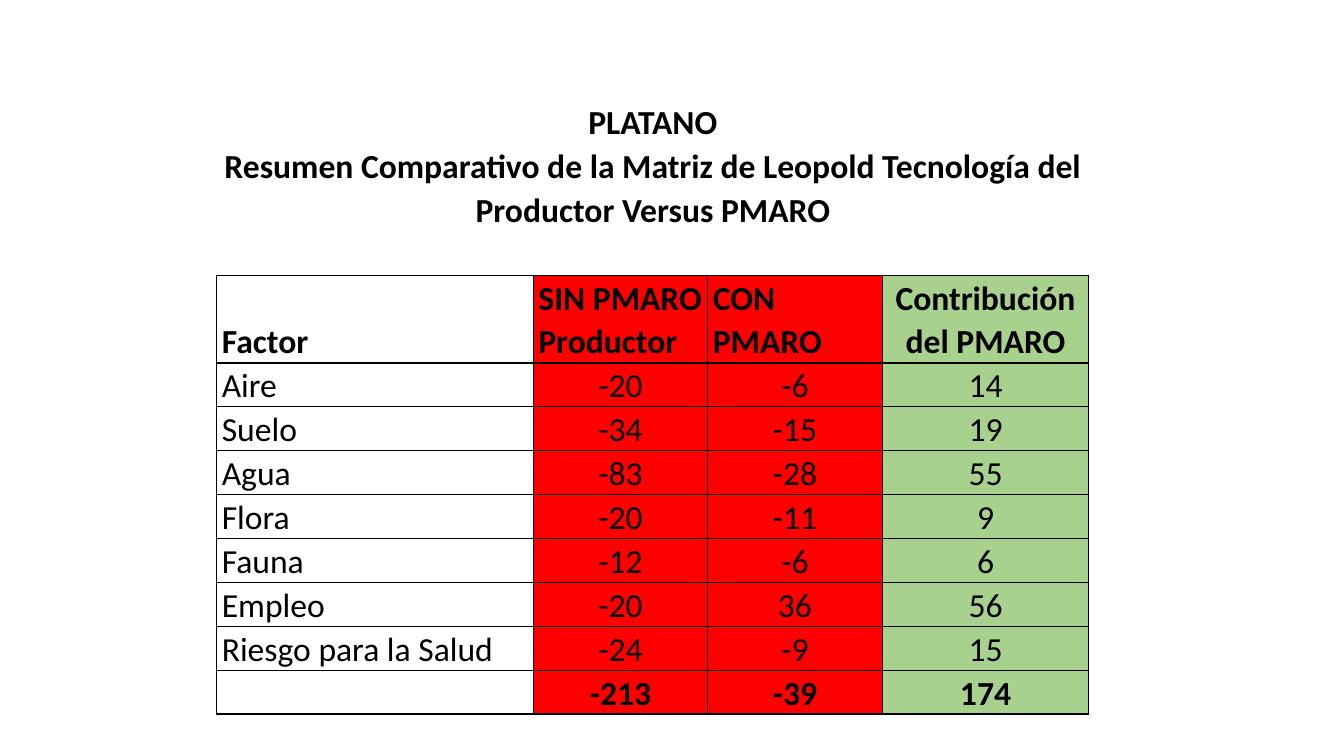
import pptx
import pptx.dml.color
import pptx.enum.text
import pptx.oxml
import pptx.oxml.ns
import pptx.util
from lxml import etree

Inches, Pt = pptx.util.Inches, pptx.util.Pt
LEFT, CENTER = pptx.enum.text.PP_ALIGN.LEFT, pptx.enum.text.PP_ALIGN.CENTER

BLACK, RED, GREEN = "000000", "FF0000", "A9D18E"
COLUMN_SHARES = [0.363, 0.2, 0.2, 0.237]
COLUMN_FILLS = [(None, 100), (RED, 100), (RED, 17), (GREEN, 100)]
LINE_HEIGHT = 0.435
TITLE = ("PLATANO\nResumen Comparativo de la Matriz de Leopold "
         "Tecnología del Productor Versus PMARO")
HEADINGS = ["Factor", "SIN PMARO\nProductor", "CON\nPMARO", "Contribución del PMARO"]
FACTORS = [
    ("Aire", -20, -6, 14),
    ("Suelo", -34, -15, 19),
    ("Agua", -83, -28, 55),
    ("Flora", -20, -11, 9),
    ("Fauna", -12, -6, 6),
    ("Empleo", -20, 36, 56),
    ("Riesgo para la Salud", -24, -9, 15),
]
TOTALS = ("", -213, -39, 174)


def rgb(color):
    return pptx.dml.color.RGBColor.from_string(color)


def draw_borders(cell, sides):
    """Draw 1 pt black lines on the given sides (L, R, T, B, in that order)."""
    properties = cell._tc.get_or_add_tcPr()
    for side in sides:
        properties.append(pptx.oxml.parse_xml(
            f'<a:ln{side} {pptx.oxml.ns.nsdecls("a")} w="{Pt(1)}"><a:solidFill>'
            f'<a:srgbClr val="{BLACK}"/></a:solidFill></a:ln{side}>'))


def fill_cell(cell, color, opacity):
    if color is None:
        cell.fill.background()
        return
    cell.fill.solid()
    cell.fill.fore_color.rgb = rgb(color)
    if opacity < 100:
        tint = cell._tc.tcPr.find(".//" + pptx.oxml.ns.qn("a:srgbClr"))
        etree.SubElement(tint, pptx.oxml.ns.qn("a:alpha"), val=str(opacity * 1000))


def write_cell(cell, text, bold, align):
    cell.text = str(text)
    cell.vertical_anchor = pptx.enum.text.MSO_ANCHOR.BOTTOM
    cell.margin_left = cell.margin_right = Inches(0.05)
    cell.margin_top = cell.margin_bottom = 0
    for paragraph in cell.text_frame.paragraphs:
        paragraph.alignment = align
        paragraph.line_spacing = 1.07
        paragraph.font.name = "Calibri"
        paragraph.font.size = Pt(24)
        paragraph.font.bold = bold
        paragraph.font.color.rgb = rgb(BLACK)


def add_comparison(slide, left, top, width):
    """Place the titled table; its height follows from the lines in each row."""
    body = [HEADINGS, *FACTORS, TOTALS]
    row_lines = [4, 2] + [1] * (len(body) - 1)
    table = slide.shapes.add_table(
        len(row_lines), len(COLUMN_SHARES), Inches(left), Inches(top),
        Inches(width), Inches(LINE_HEIGHT * sum(row_lines))).table
    table.first_row = table.horz_banding = False
    for column, share in zip(table.columns, COLUMN_SHARES):
        column.width = Inches(width * share)
    for row, lines in zip(table.rows, row_lines):
        row.height = Inches(LINE_HEIGHT * lines)

    title = table.cell(0, 0)
    title.merge(table.cell(0, len(COLUMN_SHARES) - 1))
    for cell in table.rows[0].cells:
        draw_borders(cell, "B")
        fill_cell(cell, None, 100)
    write_cell(title, TITLE, True, CENTER)
    title.margin_bottom = Inches(LINE_HEIGHT)

    for r, values in enumerate(body, start=1):
        heading = values is HEADINGS
        for c, value in enumerate(values):
            cell = table.cell(r, c)
            draw_borders(cell, "LRTB")
            fill_cell(cell, *COLUMN_FILLS[c])
            align = LEFT if c == 0 or (heading and c < 3) else CENTER
            write_cell(cell, value, heading or values is TOTALS, align)


def main():
    deck = pptx.Presentation()
    deck.slide_width, deck.slide_height = Inches(13.33), Inches(7.5)
    slide = deck.slides.add_slide(deck.slide_layouts[6])
    add_comparison(slide, 2.15, 0.99, 8.65)
    deck.save("out.pptx")


if __name__ == "__main__":
    main()
